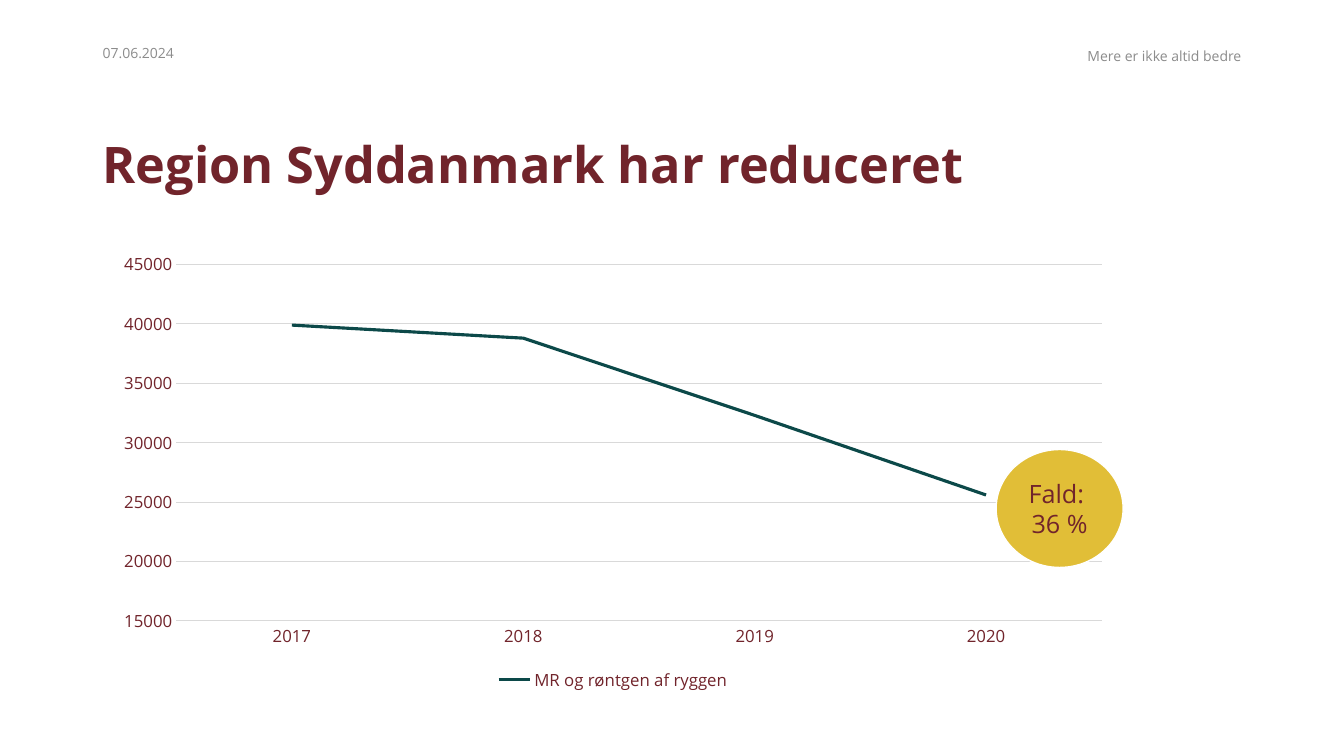
from pptx import Presentation
from pptx.chart.data import CategoryChartData
from pptx.dml.color import RGBColor
from pptx.enum.chart import XL_CHART_TYPE as CT, XL_LEGEND_POSITION as LP, XL_TICK_MARK as TM
from pptx.enum.shapes import MSO_SHAPE
from pptx.enum.text import MSO_ANCHOR as ANC, PP_ALIGN as AL
from pptx.util import Inches, Pt

WINE = RGBColor(0x71, 0x24, 0x2B)
GREY = RGBColor(0x8C, 0x8C, 0x8C)
GRID = RGBColor(0xD9, 0xD9, 0xD9)
TEAL = RGBColor(0x0C, 0x49, 0x49)
GOLD = RGBColor(0xE1, 0xBE, 0x37)
WHITE = RGBColor(0xFF, 0xFF, 0xFF)
FONT = "Open Sans"
W, H = 13.33, 7.5
MARGIN = 0.92


def style(font, size, color, bold=False):
    font.name, font.size, font.bold = FONT, Pt(size), bold
    font.color.rgb = color


def write(sp, text, size, color, align=AL.LEFT, anchor=ANC.MIDDLE, bold=False):
    """Fill a shape with text, one paragraph per line."""
    tf = sp.text_frame
    tf.word_wrap = True
    tf.vertical_anchor = anchor
    tf.text = text
    for p in tf.paragraphs:
        p.alignment = align
        for r in p.runs:
            style(r.font, size, color, bold)
    return tf


prs = Presentation()
prs.slide_width, prs.slide_height = Inches(W), Inches(H)
s = prs.slides.add_slide(prs.slide_layouts[6])

# Header and title
right = W - MARGIN
for text, x, y, w, align in [
    ("07.06.2024", MARGIN, 0.33, 3, AL.LEFT),
    ("Mere er ikke altid bedre", right - 4.5, 0.36, 4.5, AL.RIGHT),
]:
    sp = s.shapes.add_textbox(Inches(x), Inches(y), Inches(w), Inches(0.4))
    write(sp, text, 10, GREY, align)

title = s.shapes.add_textbox(Inches(MARGIN), Inches(1.34), Inches(right - MARGIN), Inches(1.16))
tf = write(title, "Region Syddanmark har reduceret", 36, WINE, anchor=ANC.TOP, bold=True)
tf.paragraphs[0].line_spacing = 0.9

# Line chart
data = CategoryChartData()
data.categories = ["2017", "2018", "2019", "2020"]
data.add_series("MR og røntgen af ryggen", [39900, 38800, 32300, 25600])
chart = s.shapes.add_chart(CT.LINE, Inches(1.03), Inches(2.42), Inches(10.1), Inches(4.48), data).chart
style(chart.font, 12, WINE)
chart.has_title = False
chart.has_legend = True
chart.legend.position = LP.BOTTOM
chart.legend.include_in_layout = False
style(chart.legend.font, 12, WINE)

years, counts = chart.category_axis, chart.value_axis
for axis in (years, counts):
    axis.major_tick_mark = axis.minor_tick_mark = TM.NONE
    style(axis.tick_labels.font, 12, WINE)
counts.minimum_scale = 15000
counts.format.line.fill.background()
counts.has_major_gridlines = True
for line in (years.format.line, counts.major_gridlines.format.line):
    line.color.rgb = GRID
    line.width = Pt(0.75)

plot = chart.plots[0]
plot.vary_by_categories = False
scans = plot.series[0]
scans.smooth = False
scans.format.line.color.rgb = TEAL
scans.format.line.width = Pt(2.25)

# Badge at the end of the line
badge = s.shapes.add_shape(MSO_SHAPE.OVAL, Inches(9.88), Inches(4.46), Inches(1.26), Inches(1.17))
badge.shadow.inherit = False
badge.fill.solid()
badge.fill.fore_color.rgb = GOLD
badge.line.color.rgb = WHITE
badge.line.width = Pt(1)
write(badge, "Fald: \n36 %", 18, WINE, AL.CENTER)

prs.save("out.pptx")
